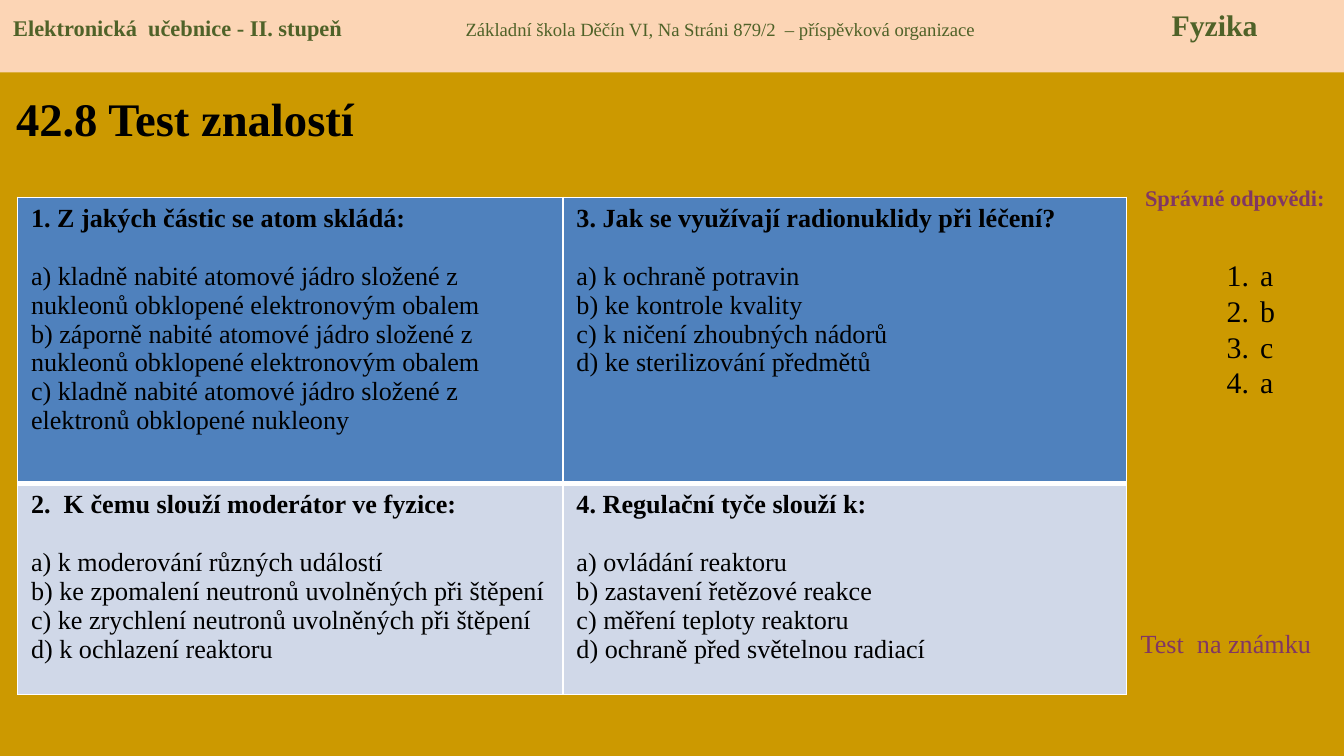
from dataclasses import dataclass

from lxml.etree import SubElement
from pptx import Presentation
from pptx.dml.color import RGBColor
from pptx.enum.shapes import MSO_SHAPE
from pptx.enum.text import MSO_ANCHOR, PP_ALIGN
from pptx.oxml.ns import qn
from pptx.util import Pt


@dataclass(frozen=True)
class Theme:
    """Colours, type sizes and font of the slide."""
    font: str = "Times New Roman"
    background: str = "CC9900"
    banner: str = "FCD5B5"
    banner_text: str = "4F6228"
    text: str = "000000"
    accent: str = "813763"
    border: str = "FFFFFF"
    rows: tuple = ("4F81BD", "D0D8E8")
    title_size: float = 25
    subject_size: float = 16
    body_size: float = 14
    label_size: float = 12
    school_size: float = 10


THEME = Theme()

QUESTIONS = [
    [
        ("1. Z jakých částic se atom skládá:", [
            "a) kladně nabité atomové jádro složené z nukleonů obklopené elektronovým obalem",
            "b) záporně nabité atomové jádro složené z nukleonů obklopené elektronovým obalem",
            "c) kladně nabité atomové jádro složené z elektronů obklopené nukleony"]),
        ("3. Jak se využívají radionuklidy při léčení?", [
            "a) k ochraně potravin",
            "b) ke kontrole kvality",
            "c) k ničení zhoubných nádorů",
            "d) ke sterilizování předmětů"]),
    ],
    [
        ("2.  K čemu slouží moderátor ve fyzice:", [
            "a) k moderování různých událostí",
            "b) ke zpomalení neutronů uvolněných při štěpení",
            "c) ke zrychlení neutronů uvolněných při štěpení",
            "d) k ochlazení reaktoru"]),
        ("4. Regulační tyče slouží k:", [
            "a) ovládání reaktoru",
            "b) zastavení řetězové reakce",
            "c) měření teploty reaktoru",
            "d) ochraně před světelnou radiací"]),
    ],
]


def to_points(box):
    """Turn a box of plain numbers into point lengths."""
    return [Pt(length) for length in box]


def add_run(paragraph, text, size, color=THEME.text, bold=False):
    """Append one formatted run to a paragraph."""
    run = paragraph.add_run()
    run.text = text
    run.font.name = THEME.font
    run.font.size = Pt(size)
    run.font.bold = bold
    run.font.color.rgb = RGBColor.from_string(color)


def add_paragraphs(frame, count):
    """Return the given number of paragraphs of an empty text frame."""
    return [frame.paragraphs[0]] + [frame.add_paragraph() for _ in range(count - 1)]


def add_banner(slide, box):
    """Draw the top band with series, school and subject at tab stops."""
    banner = slide.shapes.add_shape(MSO_SHAPE.RECTANGLE, *to_points(box))
    banner.shadow.inherit = False
    banner.fill.solid()
    banner.fill.fore_color.rgb = RGBColor.from_string(THEME.banner)
    banner.line.fill.background()
    banner.text_frame.vertical_anchor = MSO_ANCHOR.TOP
    heading = banner.text_frame.paragraphs[0]
    heading.alignment = PP_ALIGN.LEFT
    tab_list = SubElement(heading._p.get_or_add_pPr(), qn("a:tabLst"))
    for stop in (242.4, 620.6):
        SubElement(tab_list, qn("a:tab"), pos=str(Pt(stop)), algn="l")
    parts = [
        ("Elektronická  učebnice - II. stupeň\t", THEME.label_size, True),
        ("Základní škola Děčín VI, Na Stráni 879/2  – příspěvková organizace\t",
         THEME.school_size, False),
        ("Fyzika", THEME.subject_size, True),
    ]
    for text, size, bold in parts:
        add_run(heading, text, size, THEME.banner_text, bold)


def place_title(slide, box):
    """Move and format the title placeholder."""
    title = slide.shapes.title
    title.left, title.top, title.width, title.height = to_points(box)
    title.text_frame.vertical_anchor = MSO_ANCHOR.MIDDLE
    heading = title.text_frame.paragraphs[0]
    heading.alignment = PP_ALIGN.LEFT
    add_run(heading, "42.8 Test znalostí", THEME.title_size, bold=True)


def add_border(cell, side, width):
    """Give one side of a table cell a solid border."""
    line = SubElement(cell._tc.get_or_add_tcPr(), qn(f"a:ln{side}"), w=str(Pt(width)))
    fill = SubElement(line, qn("a:solidFill"))
    SubElement(fill, qn("a:srgbClr"), val=THEME.border)


def fill_question(cell, question, answers):
    """Write a question and its answers into a table cell."""
    heading, *lines = add_paragraphs(cell.text_frame, len(answers) + 1)
    heading.space_after = Pt(15.5)
    add_run(heading, question, THEME.body_size, bold=True)
    for line, answer in zip(lines, answers):
        add_run(line, answer, THEME.body_size)


def add_questions(slide, box):
    """Build the table of questions in the given box."""
    table = slide.shapes.add_table(2, 2, *to_points(box)).table
    table.first_row = table.horz_banding = False
    left, top, width, height = box
    for column, share in zip(table.columns, (0.492, 0.508)):
        column.width = Pt(width * share)
    for row, share in zip(table.rows, (0.576, 0.424)):
        row.height = Pt(height * share)
    for i, questions in enumerate(QUESTIONS):
        widths = {"L": 1, "R": 1, "T": 3 if i else 1, "B": 1 if i else 3}
        for j, (question, answers) in enumerate(questions):
            cell = table.cell(i, j)
            for side, line_width in widths.items():
                add_border(cell, side, line_width)
            cell.fill.solid()
            cell.fill.fore_color.rgb = RGBColor.from_string(THEME.rows[i])
            fill_question(cell, question, answers)


def add_label(slide, box, text, size, bold=False, alignment=PP_ALIGN.LEFT):
    """Add a one-line label in the accent colour."""
    frame = slide.shapes.add_textbox(*to_points(box)).text_frame
    frame.word_wrap = True
    frame.paragraphs[0].alignment = alignment
    add_run(frame.paragraphs[0], text, size, THEME.accent, bold)


def add_answer_key(slide, box):
    """Add the numbered list of right answers."""
    frame = slide.shapes.add_textbox(*to_points(box)).text_frame
    frame.word_wrap = True
    frame.margin_top = Pt(23)
    answers = "abca"
    for line, answer in zip(add_paragraphs(frame, len(answers)), answers):
        line.line_spacing = Pt(19.2)
        properties = line._p.get_or_add_pPr()
        properties.set("marL", str(Pt(18)))
        properties.set("indent", str(-Pt(18)))
        SubElement(properties, qn("a:buFont"), typeface=THEME.font)
        SubElement(properties, qn("a:buAutoNum"), type="arabicPeriod")
        add_run(line, answer, THEME.subject_size)


def main():
    """Build and save the slide."""
    deck = Presentation()
    deck.slide_width, deck.slide_height = Pt(720), Pt(405)
    slide = deck.slides.add_slide(deck.slide_layouts[5])
    slide.background.fill.solid()
    slide.background.fill.fore_color.rgb = RGBColor.from_string(THEME.background)
    place_title(slide, (1.4, 39.6, 229.7, 46.8))
    add_label(slide, (604, 95, 115.2, 21.6), "Správné odpovědi:",
              THEME.label_size, True, PP_ALIGN.CENTER)
    add_answer_key(slide, (650, 114.5, 39.6, 143.3))
    add_label(slide, (604, 332.6, 113, 24.5), "Test  na známku", THEME.body_size)
    add_banner(slide, (0, 0, 720, 38.9))
    add_questions(slide, (9.4, 105.8, 594, 266.4))
    deck.save("out.pptx")


if __name__ == "__main__":
    main()
